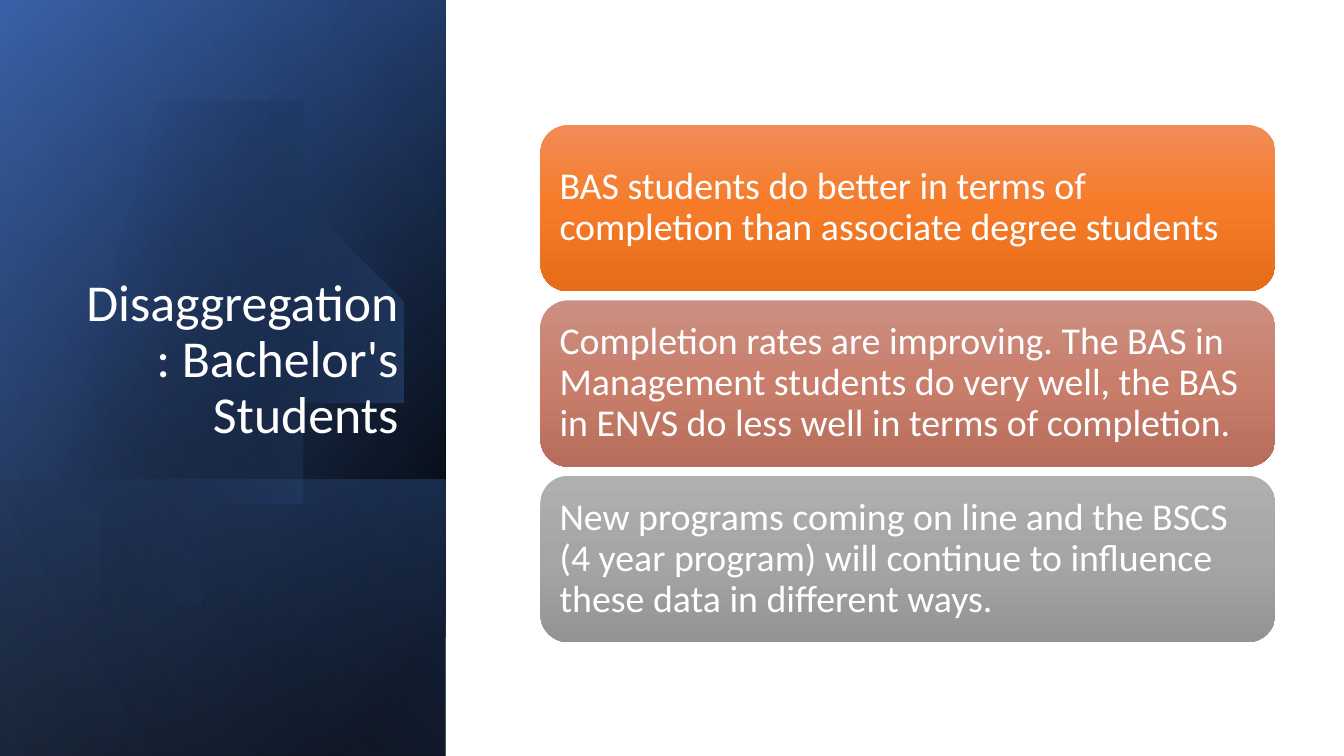
from lxml import etree
from pptx import Presentation
from pptx.dml.color import RGBColor
from pptx.enum.shapes import MSO_SHAPE as Shape
from pptx.enum.text import MSO_ANCHOR as Anchor, PP_ALIGN as Align
from pptx.oxml.ns import qn
from pptx.util import Inches, Pt

FONT = "Calibri"
CARD_GAP = 0.09
CARDS = [
    ("BAS students do better in terms of completion than associate degree students",
     ["F18C57", "F67B28", "E56C19"]),
    ("Completion rates are improving. The BAS in Management students do very well, "
     "the BAS in ENVS do less well in terms of completion.",
     ["CB8F81", "C97E6B", "B76D5B"]),
    ("New programs coming on line and the BSCS (4 year program) will continue to "
     "influence these data in different ways.",
     ["AFAFAF", "A5A5A5", "939393"]),
]
# Outline of the clipped circle: start, curves, left edge, closing curves
CIRCLE_START = (1.49, 1.1)
RIGHT_CURVES = [
    [(2.46, 1.12), (3.35, 1.77), (3.63, 2.75)],
    [(3.98, 3.97), (3.28, 5.23), (2.07, 5.58)],
    [(1.31, 5.8), (0.53, 5.61), (-0.03, 5.14)],
]
LEFT_EDGE = [(-0.15, 5.03), (-0.15, 1.75), (0, 1.61)]
TOP_CURVES = [
    [(0.23, 1.42), (0.5, 1.28), (0.8, 1.19)],
    [(1.03, 1.13), (1.26, 1.1), CIRCLE_START],
]


def color(hex_value):
    return RGBColor.from_string(hex_value)


def fill_gradient(shape, stops, angle):
    """Stops are (position %, colour, opacity %)."""
    shape.shadow.inherit = False
    shape.line.fill.background()
    shape.fill.gradient()
    gradient = shape.element.spPr.find(qn("a:gradFill"))
    gradient.set("rotWithShape", "1")
    for child in list(gradient):
        gradient.remove(child)
    stop_list = etree.SubElement(gradient, qn("a:gsLst"))
    for position, hex_value, opacity in stops:
        stop = etree.SubElement(stop_list, qn("a:gs"), pos=str(position * 1000))
        tint = etree.SubElement(stop, qn("a:srgbClr"), val=hex_value)
        if opacity < 100:
            etree.SubElement(tint, qn("a:alpha"), val=str(opacity * 1000))
    etree.SubElement(gradient, qn("a:lin"), ang=str(angle * 60000), scaled="0")


def write(frame, text, size, align, anchor):
    frame.word_wrap = True
    frame.vertical_anchor = anchor
    paragraph = frame.paragraphs[0]
    paragraph.text = text
    paragraph.alignment = align
    paragraph.line_spacing = 0.9
    font = paragraph.runs[0].font
    font.name, font.size = FONT, Pt(size)
    font.color.rgb = color("FFFFFF")


def add_layer(slide, box, stops, angle):
    """Cover the box with a mirrored rectangle turned by a quarter."""
    left, top, width, height = box
    shift = (width - height) / 2
    layer = slide.shapes.add_shape(Shape.RECTANGLE, Inches(left + shift),
                                   Inches(top - shift), Inches(height), Inches(width))
    layer.rotation = 90
    layer.element.spPr.xfrm.set("flipH", "1")
    fill_gradient(layer, stops, angle)


def curve_points(start, curves, steps=16):
    points = []
    for first, second, end in curves:
        for step in range(1, steps + 1):
            t = step / steps
            u = 1 - t
            points.append(tuple(
                u**3 * a + 3 * u * u * t * b + 3 * u * t * t * c + t**3 * d
                for a, b, c, d in zip(start, first, second, end)))
        start = end
    return points


def add_circle(slide, left, top):
    outline = (curve_points(CIRCLE_START, RIGHT_CURVES) + LEFT_EDGE
               + curve_points(LEFT_EDGE[-1], TOP_CURVES))
    placed = [(left + x, top + y) for x, y in outline]
    builder = slide.shapes.build_freeform(
        left + CIRCLE_START[0], top + CIRCLE_START[1], scale=Inches(1))
    builder.add_line_segments(placed, close=True)
    fill_gradient(builder.convert_to_shape(),
                  [(29, "000000", 0), (100, "4472C4", 43)], 14)


def add_title_panel(slide, left, top, width, height):
    panel = (left, top, width, height)
    lower_height = 2.74
    lower = (left, top + height - lower_height, width, lower_height)
    # Background layers
    add_layer(slide, panel, [(8, "000000", 100), (100, "2F5597", 100)], 50)
    add_layer(slide, panel, [(0, "000000", 0), (99, "4472C4", 46)], 30)
    add_layer(slide, lower, [(2, "4472C4", 29), (100, "000000", 30)], 130)
    add_circle(slide, left, top)
    add_layer(slide, panel, [(0, "000000", 0), (99, "8FAADC", 11)], 120)
    # Title
    title = slide.shapes.add_textbox(Inches(left + 0.64), Inches(top + 1.84),
                                     Inches(3.41), Inches(2.62))
    write(title.text_frame, "Disaggregation: Bachelor's Students", 37,
          Align.RIGHT, Anchor.BOTTOM)


def add_cards(slide, left, top, width, height):
    card_height = (height - CARD_GAP * (len(CARDS) - 1)) / len(CARDS)
    for index, (finding, shades) in enumerate(CARDS):
        card_top = top + index * (card_height + CARD_GAP)
        card = slide.shapes.add_shape(Shape.ROUNDED_RECTANGLE, Inches(left),
                                      Inches(card_top), Inches(width), Inches(card_height))
        fill_gradient(card, [(i * 50, shade, 100) for i, shade in enumerate(shades)], 90)
        frame = card.text_frame
        frame.margin_left = frame.margin_right = Inches(0.11)
        frame.margin_top = frame.margin_bottom = Inches(0.11)
        write(frame, finding, 27, Align.LEFT, Anchor.MIDDLE)


def main():
    deck = Presentation()
    deck.slide_width, deck.slide_height = Inches(13.33), Inches(7.5)
    slide = deck.slides.add_slide(deck.slide_layouts[6])
    add_title_panel(slide, 0, 0, 4.42, 7.5)
    add_cards(slide, 5.36, 1.24, 7.29, 5.13)
    deck.save("out.pptx")


if __name__ == "__main__":
    main()
